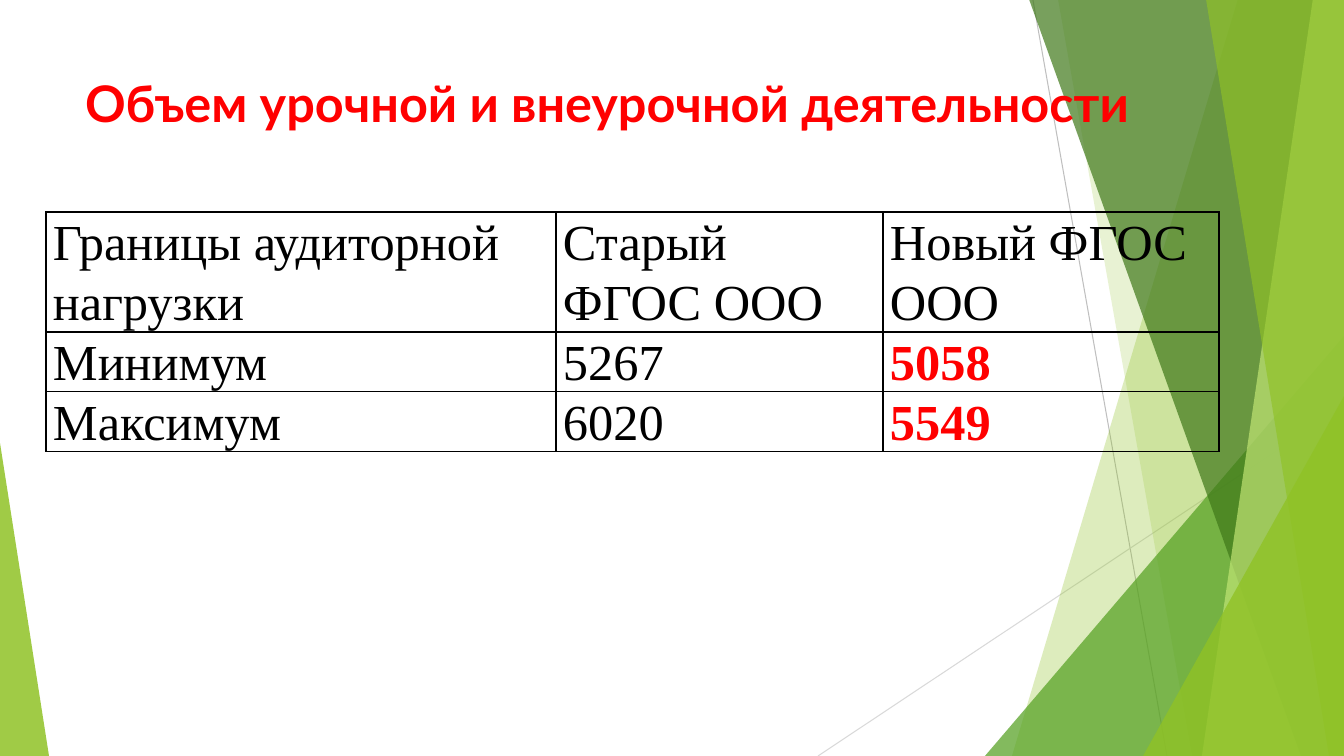
"""Build a slide comparing lesson hours under the old and new standards."""
from lxml import etree
from pptx import Presentation
from pptx.dml.color import RGBColor
from pptx.enum.shapes import MSO_CONNECTOR, MSO_SHAPE
from pptx.enum.text import MSO_ANCHOR, PP_ALIGN
from pptx.oxml.ns import qn
from pptx.util import Emu, Pt

STRAIGHT = MSO_CONNECTOR.STRAIGHT
TRIANGLE = MSO_SHAPE.ISOSCELES_TRIANGLE
LEFT = PP_ALIGN.LEFT
TOP = MSO_ANCHOR.TOP
TITLE_ONLY = 5
WIDTH, HEIGHT = 1344, 756
RED, BLACK = "FF0000", "000000"


def px(n):
    return Emu(round(n * 914400 / 100.8))


def rgb(color):
    return RGBColor.from_string(color)


prs = Presentation()
prs.slide_width, prs.slide_height = px(WIDTH), px(HEIGHT)
s = prs.slides.add_slide(prs.slide_layouts[TITLE_ONLY])

for x1, y1, x2, y2, color in [
    (1033, 0, 1167, HEIGHT, "BFBFBF"),
    (WIDTH, 406, 818, HEIGHT, "D9D9D9"),
]:
    line = s.shapes.add_connector(STRAIGHT, px(x1), px(y1), px(x2), px(y2))
    line.line.color.rgb = rgb(color)
    line.line.width = Pt(0.75)
    etree.SubElement(line.element.spPr, qn("a:effectLst"))

# Bands give top and bottom left x; triangles give left, top, width, apex.
facets = [
    ((1238, 1012), "90C226", 30),
    ((1058, 1192), "90C226", 20),
    ((985, 336, 359, 1), "54A021", 72),
    ((1029, 1301), "3F7819", 70),
    ((1313, 1202), "C0E474", 70),
    ((1206, 1329), "90C226", 65),
    ((1143, 396, 201, 1), "90C226", 80),
    ((0, 443, 49, 0), "90C226", 85),
]
for geometry, color, opacity in facets:
    if len(geometry) == 2:
        x_top, x_bottom = geometry
        fb = s.shapes.build_freeform(px(x_top), px(-1))
        fb.add_line_segments([(px(WIDTH), px(-1)), (px(WIDTH), px(HEIGHT)),
                              (px(x_bottom), px(HEIGHT))], close=True)
        sp = fb.convert_to_shape()
    else:
        x, y, w, apex = geometry
        sp = s.shapes.add_shape(TRIANGLE, px(x), px(y), px(w), px(HEIGHT - y))
        sp.adjustments[0] = apex
    sp.shadow.inherit = False
    sp.line.fill.background()
    sp.fill.solid()
    sp.fill.fore_color.rgb = rgb(color)
    fill_color = sp.element.spPr.find(qn("a:solidFill"))[0]
    etree.SubElement(fill_color, qn("a:alpha"), val=str(opacity * 1000))

title = s.shapes.title
title.left, title.top, title.width, title.height = px(75), px(67), px(1158), px(145)
title.element.getparent().append(title.element)
tf = title.text_frame
tf.text = "Объем урочной и внеурочной деятельности"
tf.word_wrap = True
tf.vertical_anchor = TOP
p = tf.paragraphs[0]
p.alignment = LEFT
p.font.name, p.font.size, p.font.bold = "Lato", Pt(36), True
p.font.color.rgb = rgb(RED)

rows = [
    ("Границы аудиторной нагрузки", "Старый ФГОС ООО", "Новый ФГОС ООО"),
    ("Минимум", "5267", "5058"),
    ("Максимум", "6020", "5549"),
]
col_widths = [510, 327, 336]
row_heights = [120, 59, 60]
table = s.shapes.add_table(len(rows), len(col_widths), px(46), px(212),
                           px(sum(col_widths)), px(sum(row_heights))).table
table.first_row = table.horz_banding = False
for column, width in zip(table.columns, col_widths):
    column.width = px(width)
for i, (row, height) in enumerate(zip(rows, row_heights)):
    table.rows[i].height = px(height)
    for j, text in enumerate(row):
        cell = table.cell(i, j)
        cell.margin_left = cell.margin_right = px(7)
        cell.margin_top = cell.margin_bottom = 0
        cell.vertical_anchor = TOP
        cell.text = text
        p = cell.text_frame.paragraphs[0]
        p.line_spacing, p.space_after = 1.07, Pt(8)
        is_new_value = i > 0 and j == 2
        p.font.name, p.font.size, p.font.bold = "Times New Roman", Pt(36), is_new_value
        p.font.color.rgb = rgb(RED if is_new_value else BLACK)
        tcPr = cell._tc.get_or_add_tcPr()
        for side in ("lnL", "lnR", "lnT", "lnB"):
            border = etree.SubElement(tcPr, qn(f"a:{side}"), w=str(Pt(1)))
            border_fill = etree.SubElement(border, qn("a:solidFill"))
            etree.SubElement(border_fill, qn("a:srgbClr"), val=BLACK)
        cell.fill.background()

prs.save("out.pptx")
